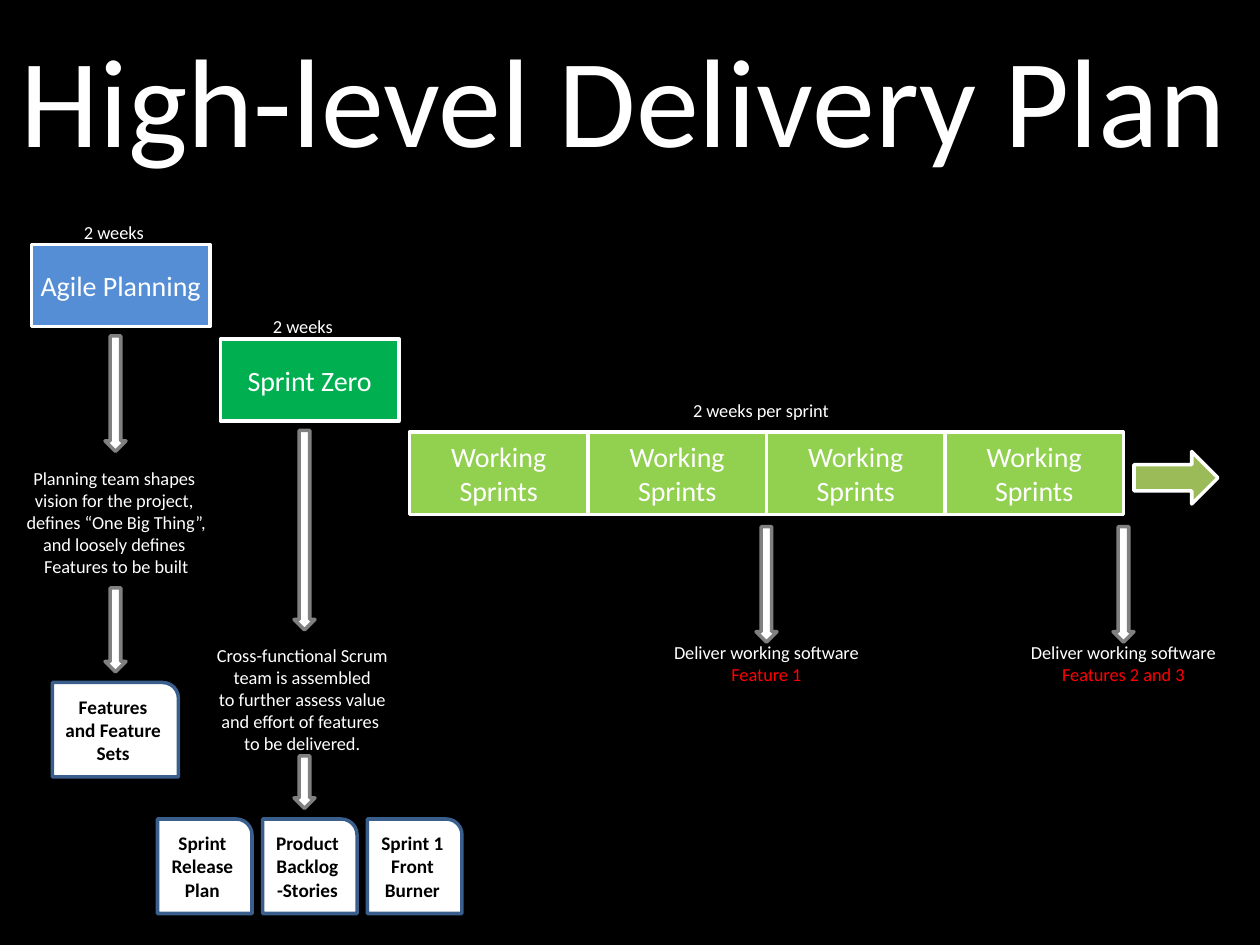
from pptx import Presentation
from pptx.dml.color import RGBColor
from pptx.enum.shapes import MSO_SHAPE
from pptx.enum.text import MSO_ANCHOR, MSO_AUTO_SIZE, PP_ALIGN
from pptx.util import Pt

BLACK = RGBColor(0x00, 0x00, 0x00)
WHITE = RGBColor(0xFF, 0xFF, 0xFF)
RED = RGBColor(0xFF, 0x00, 0x00)
GRAY = RGBColor(0x80, 0x80, 0x80)
BLUE = RGBColor(0x55, 0x8E, 0xD5)
NAVY = RGBColor(0x3A, 0x5F, 0x8C)
GREEN = RGBColor(0x00, 0xB0, 0x50)
LIME = RGBColor(0x92, 0xD0, 0x50)
OLIVE = RGBColor(0x9B, 0xBB, 0x59)

PHASE_W, PHASE_H = 102, 47
SPRINT_X, SPRINT_Y, SPRINT_COUNT = 234, 247, 4


def set_text(tf, lines, size=10.5, color=WHITE, bold=False, align=PP_ALIGN.CENTER,
             margin=None, last_color=None):
    tf.vertical_anchor = MSO_ANCHOR.MIDDLE
    if margin is not None:
        tf.margin_left = tf.margin_right = tf.margin_top = tf.margin_bottom = Pt(margin)
    for i, line in enumerate(lines):
        p = tf.add_paragraph() if i else tf.paragraphs[0]
        p.alignment = align
        r = p.add_run()
        r.text = line
        r.font.name = "Calibri"
        r.font.size = Pt(size)
        r.font.bold = bold
        is_last = i == len(lines) - 1
        r.font.color.rgb = last_color if last_color and is_last else color


def add_label(s, x, y, w, h, *lines, **fmt):
    tf = s.shapes.add_textbox(Pt(x), Pt(y), Pt(w), Pt(h)).text_frame
    tf.word_wrap = False
    tf.auto_size = MSO_AUTO_SIZE.SHAPE_TO_FIT_TEXT
    set_text(tf, lines, margin=0, **fmt)


def add_block(s, kind, x, y, w, h, fill, line):
    sp = s.shapes.add_shape(kind, Pt(x), Pt(y), Pt(w), Pt(h))
    sp.shadow.inherit = False
    sp.fill.solid()
    sp.fill.fore_color.rgb = fill
    sp.line.color.rgb = line
    sp.line.width = Pt(2)
    return sp


def add_phase(s, x, y, text, fill):
    sp = add_block(s, MSO_SHAPE.RECTANGLE, x, y, PHASE_W, PHASE_H, fill, WHITE)
    set_text(sp.text_frame, [text], size=16, margin=0)


def add_down_arrow(s, x, y, h):
    add_block(s, MSO_SHAPE.DOWN_ARROW, x, y, 12, h, WHITE, GRAY)


def add_output(s, x, y, w, text):
    sp = add_block(s, MSO_SHAPE.ROUND_1_RECTANGLE, x, y, w, 54, WHITE, NAVY)
    set_text(sp.text_frame, [text], size=11, color=BLACK, bold=True)


def add_planning(s):
    add_label(s, 48, 126, 35, 13, "2 weeks", align=PP_ALIGN.LEFT)
    add_phase(s, 18, 139.7, "Agile Planning", BLUE)
    add_down_arrow(s, 60, 192, 66)
    add_label(s, 14, 266.5, 105, 63.5,
              "Planning team shapes ", "vision for the project, ",
              "defines “One Big Thing”,", "and loosely defines ",
              "Features to be built")
    add_down_arrow(s, 60, 336, 48)
    add_output(s, 30, 390, 72, "Features and Feature Sets")


def add_sprint_zero(s):
    add_label(s, 156, 180, 35, 13, "2 weeks", align=PP_ALIGN.LEFT)
    add_phase(s, 126, 193.7, "Sprint Zero", GREEN)
    add_down_arrow(s, 168, 246, 114)
    add_label(s, 123, 368, 99.5, 63.5,
              "Cross-functional Scrum", "team is assembled",
              "to further assess value", "and effort of features ",
              "to be delivered.")
    add_down_arrow(s, 168, 432, 30)
    outputs = ["Sprint Release Plan", "Product Backlog -Stories", "Sprint 1 Front Burner"]
    for i, text in enumerate(outputs):
        add_output(s, 90 + 60 * i, 468, 54, text)


def add_working_sprints(s):
    add_label(s, 396, 228, 79, 13, "2 weeks per sprint", align=PP_ALIGN.LEFT)
    for i in range(SPRINT_COUNT):
        add_phase(s, SPRINT_X + PHASE_W * i, SPRINT_Y, "Working Sprints", LIME)
    sp = add_block(s, MSO_SHAPE.DOWN_ARROW, 657, 249, 30, 48, OLIVE, WHITE)
    sp.rotation = 270
    for sprints_done, features in ((2, "Feature 1"), (4, "Features 2 and 3")):
        center = SPRINT_X + PHASE_W * sprints_done
        add_down_arrow(s, center - 6, 301, 66)
        add_label(s, center - 54, 366, 108, 25.5,
                  "Deliver working software", features, last_color=RED)


def main():
    prs = Presentation()
    prs.slide_width, prs.slide_height = Pt(720), Pt(540)
    s = prs.slides.add_slide(prs.slide_layouts[6])
    s.background.fill.solid()
    s.background.fill.fore_color.rgb = BLACK
    add_label(s, 12, 12, 696, 87, "High-level Delivery Plan", size=72, align=PP_ALIGN.LEFT)
    add_planning(s)
    add_sprint_zero(s)
    add_working_sprints(s)
    prs.save("out.pptx")


if __name__ == "__main__":
    main()
